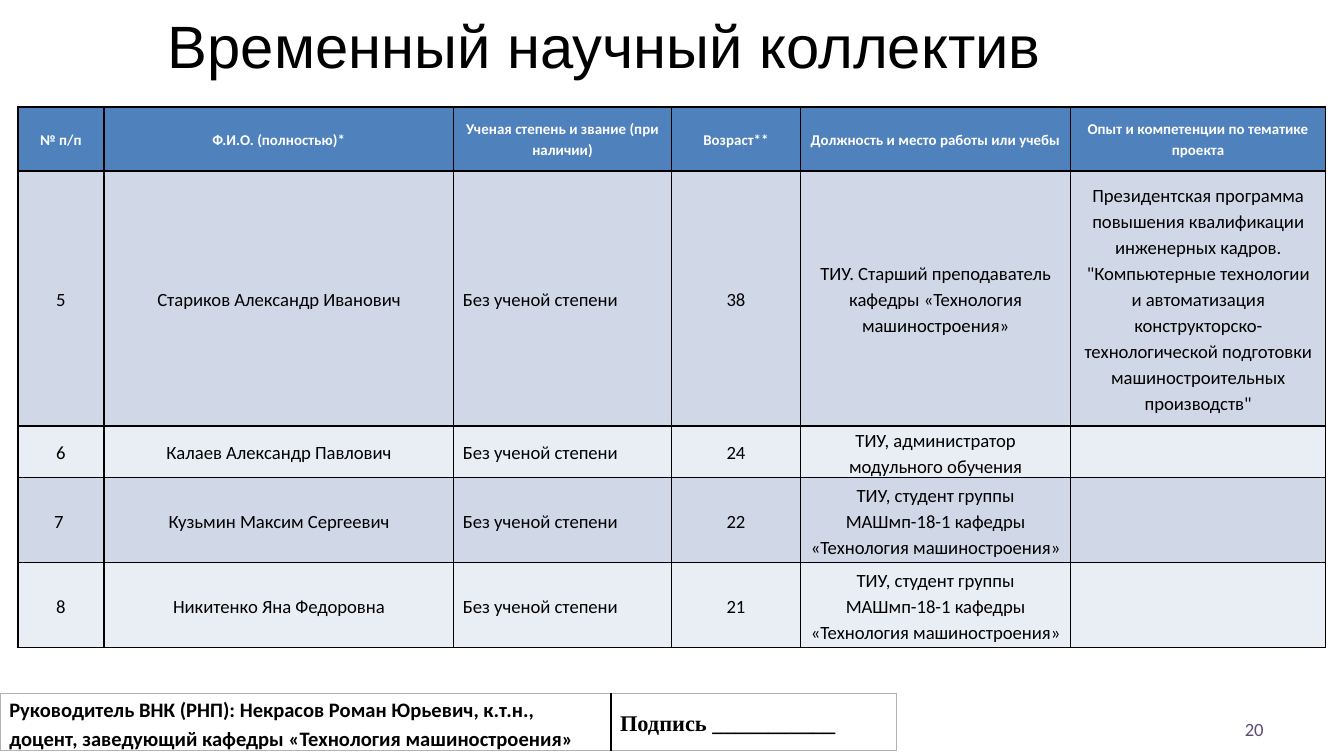
from copy import deepcopy

from lxml import etree
from pptx import Presentation
from pptx.dml.color import RGBColor
from pptx.enum.text import MSO_ANCHOR, PP_ALIGN
from pptx.oxml.ns import qn
from pptx.util import Pt

LEFT, CENTER, RIGHT, JUSTIFY = PP_ALIGN.LEFT, PP_ALIGN.CENTER, PP_ALIGN.RIGHT, PP_ALIGN.JUSTIFY
MIDDLE = MSO_ANCHOR.MIDDLE
COLORS = {
    "black": "000000",
    "white": "FFFFFF",
    "header": "4F81BD",
    "odd_row": "D0D8E8",
    "even_row": "E9EDF4",
    "number": "604A7B",
    "frame": "B2B2B2",
}


def write(frame, text, size=10, font="Calibri", color="black", bold=False,
          align=CENTER, spacing=None):
    """Put text into a frame's first paragraph; a newline is a line break."""
    frame.word_wrap = True
    paragraph = frame.paragraphs[0]
    paragraph.text = text
    paragraph.alignment = align
    paragraph.line_spacing = spacing
    for run in paragraph.runs:
        run.font.size = Pt(size)
        run.font.name = font
        run.font.bold = bold
        run.font.color.rgb = RGBColor.from_string(COLORS[color])
    for line_break in paragraph._p.findall(qn("a:br")):
        line_break.append(deepcopy(paragraph.runs[0].font._element))


def style_cell(cell, borders, fill=None):
    """Set margins, anchor, borders (side: color, width) and fill of a cell."""
    cell.margin_left = cell.margin_right = Pt(5)
    cell.margin_top = cell.margin_bottom = Pt(0)
    cell.vertical_anchor = MIDDLE
    properties = cell._tc.get_or_add_tcPr()
    for side in ("L", "R", "T", "B"):
        color, width = borders[side]
        line = etree.SubElement(properties, qn(f"a:ln{side}"), w=str(Pt(width)))
        solid = etree.SubElement(line, qn("a:solidFill"))
        etree.SubElement(solid, qn("a:srgbClr"), val=COLORS[color])
    if fill:
        cell.fill.solid()
        cell.fill.fore_color.rgb = RGBColor.from_string(COLORS[fill])
    else:
        cell.fill.background()


presentation = Presentation()
presentation.slide_width, presentation.slide_height = Pt(720), Pt(405)
slide = presentation.slides.add_slide(presentation.slide_layouts[6])

# Title
title = slide.shapes.add_textbox(Pt(0), Pt(-10), Pt(648), Pt(68))
title.text_frame.vertical_anchor = MIDDLE
write(title.text_frame, "Временный научный коллектив", size=32, font="Arial")

# Team table
no_degree = "Без ученой степени"
student = "ТИУ, студент группы МАШмп-18-1 кафедры «Технология машиностроения»"
team = [
    ["№ п/п", "Ф.И.О. (полностью)*", "Ученая степень и звание (при наличии)", "Возраст**",
     "Должность и место работы или учебы", "Опыт и компетенции по тематике проекта"],
    ["5", "Стариков Александр Иванович", no_degree, "38",
     "ТИУ. Старший преподаватель кафедры «Технология машиностроения»",
     "Президентская программа повышения квалификации инженерных кадров.\n"
     "\"Компьютерные технологии и автоматизация конструкторско-технологической "
     "подготовки машиностроительных производств\""],
    ["6", "Калаев Александр Павлович", no_degree, "24",
     "ТИУ, администратор модульного обучения", ""],
    ["7 ", "Кузьмин Максим Сергеевич", no_degree, "22", student, ""],
    ["8", "Никитенко Яна Федоровна", no_degree, "21", student, ""],
]
column_widths = [46.3, 187.2, 116.8, 69, 144.8, 136.6]
row_heights = [34.2, 136.8, 23, 45.5, 45.5]
team_table = slide.shapes.add_table(
    len(team), len(column_widths), Pt(9.5), Pt(57.3),
    Pt(sum(column_widths)), Pt(sum(row_heights))).table
for column, width in zip(team_table.columns, column_widths):
    column.width = Pt(width)
grid = dict.fromkeys("LRTB", ("black", 1))
for i, (values, height) in enumerate(zip(team, row_heights)):
    team_table.rows[i].height = Pt(height)
    is_header = i == 0
    fill = "header" if is_header else "odd_row" if i % 2 else "even_row"
    for j, text in enumerate(values):
        cell = team_table.cell(i, j)
        style_cell(cell, grid, fill)
        write(cell.text_frame, text, size=8 if is_header else 10,
              color="white" if is_header else "black", bold=is_header,
              align=LEFT if text == no_degree else CENTER, spacing=1.15)

# Signature table
signature_widths = [327.2, 152.8]
signature_table = slide.shapes.add_table(
    1, 2, Pt(0), Pt(371.7), Pt(sum(signature_widths)), Pt(30)).table
signature_cells = [
    ("Руководитель ВНК (РНП): Некрасов Роман Юрьевич, к.т.н., доцент, "
     "заведующий кафедры «Технология машиностроения»", 11, "Calibri", LEFT, "R"),
    ("Подпись ___________", 12, "Times New Roman", JUSTIFY, "L"),
]
for j, (text, size, font, align, inner_side) in enumerate(signature_cells):
    signature_table.columns[j].width = Pt(signature_widths[j])
    cell = signature_table.cell(0, j)
    style_cell(cell, {**dict.fromkeys("LRTB", ("frame", 0.5)), inner_side: ("black", 1)})
    write(cell.text_frame, text, size=size, font=font, bold=True, align=align, spacing=1.15)

# Slide number
number = slide.shapes.add_textbox(Pt(516), Pt(380), Pt(168), Pt(21.6))
number.text_frame.vertical_anchor = MIDDLE
write(number.text_frame, "20", color="number", align=RIGHT)

presentation.save("out.pptx")
